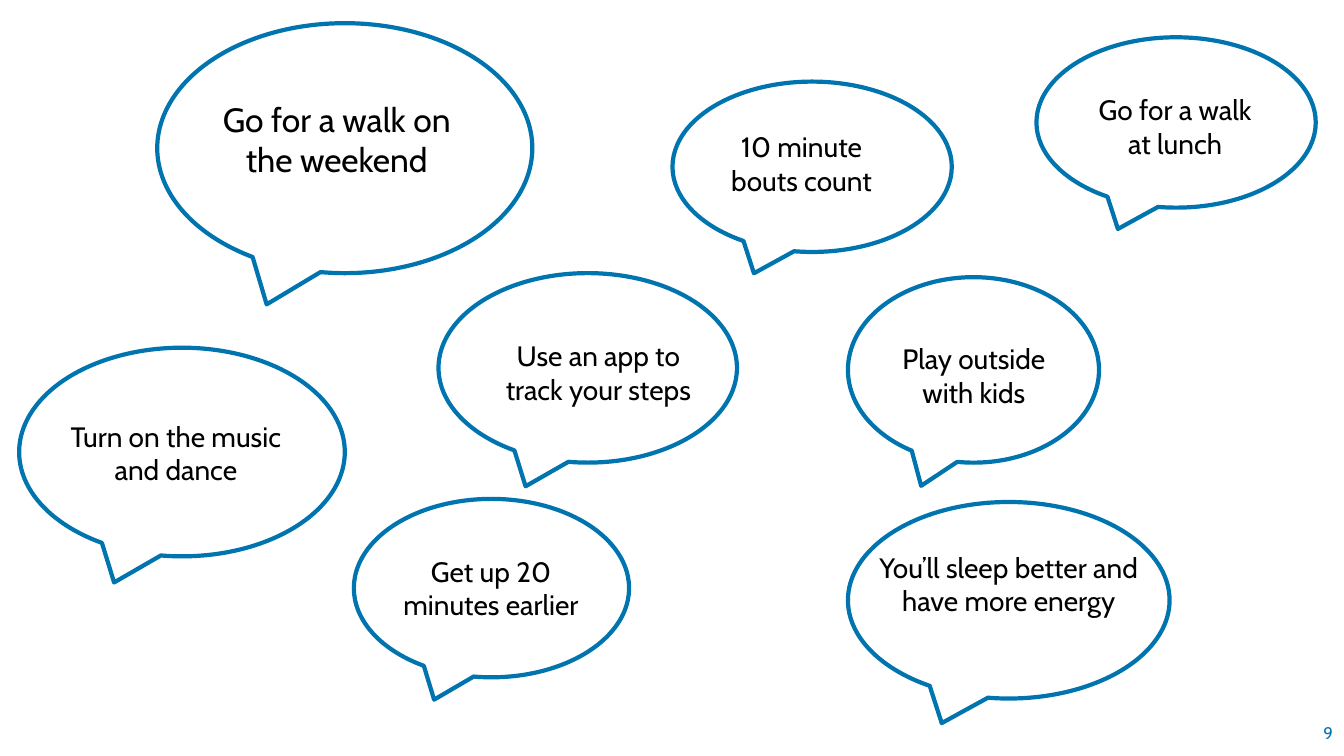
from dataclasses import dataclass

from pptx import Presentation
from pptx.dml.color import RGBColor
from pptx.enum.shapes import MSO_SHAPE
from pptx.enum.text import MSO_ANCHOR, MSO_AUTO_SIZE, PP_ALIGN
from pptx.util import Inches, Pt


@dataclass(frozen=True)
class Theme:
    font: str = "Cabin"
    blue: RGBColor = RGBColor(0x00, 0x74, 0xAF)
    black: RGBColor = RGBColor(0x00, 0x00, 0x00)
    large: int = 24
    body: int = 20
    small: int = 12
    line: int = 3


THEME = Theme()

TIPS = [
    ("Turn on the music and dance", (0.19, 3.45, 3.23, 2.07), (0.51, 4.11, 2.47, 0.77), THEME.body),
    ("Play outside with kids", (8.41, 2.75, 2.49, 1.84), (8.66, 3.34, 2, 0.77), THEME.body),
    ("Go for a walk on the weekend", (1.56, 0.23, 3.72, 2.48), (2.02, 0.93, 2.64, 0.91), THEME.large),
    ("Go for a walk at lunch", (10.28, 0.37, 2.77, 1.69), (10.68, 0.87, 1.95, 0.77), THEME.body),
    ("Use an app to track your steps", (4.35, 2.71, 2.96, 1.88), (4.78, 3.31, 2.31, 0.77), THEME.body),
    ("10 minute bouts count", (6.67, 0.81, 2.77, 1.69), (6.89, 1.24, 2.12, 0.77), THEME.body),
    ("You’ll sleep better and have more energy", (8.41, 4.98, 3.19, 1.95), (8.59, 5.41, 2.83, 1.11), THEME.body),
    ("Get up 20 minutes earlier", (3.51, 4.95, 2.73, 1.77), (3.81, 5.45, 2.12, 0.77), THEME.body),
]


def add_text(slide, text, place, size=THEME.body, color=THEME.black,
             align=PP_ALIGN.CENTER, anchor=MSO_ANCHOR.TOP, fit=MSO_AUTO_SIZE.NONE):
    box = slide.shapes.add_textbox(*map(Inches, place))
    frame = box.text_frame
    frame.word_wrap = True
    frame.auto_size = fit
    frame.vertical_anchor = anchor
    para = frame.paragraphs[0]
    para.alignment = align
    run = para.add_run()
    run.text = text
    run.font.name = THEME.font
    run.font.size = Pt(size)
    run.font.color.rgb = color


def add_bubble(slide, place):
    bubble = slide.shapes.add_shape(MSO_SHAPE.OVAL_CALLOUT, *map(Inches, place))
    bubble.shadow.inherit = False
    bubble.fill.background()
    bubble.line.color.rgb = THEME.blue
    bubble.line.width = Pt(THEME.line)


def main():
    deck = Presentation()
    deck.slide_width = Inches(13.33)
    deck.slide_height = Inches(7.5)
    slide = deck.slides.add_slide(deck.slide_layouts[6])
    add_text(slide, "9", (12.85, 7.07, 0.47, 0.4), size=THEME.small, color=THEME.blue,
             align=PP_ALIGN.RIGHT, anchor=MSO_ANCHOR.MIDDLE)
    for text, bubble, place, size in TIPS:
        add_bubble(slide, bubble)
        add_text(slide, text, place, size=size, fit=MSO_AUTO_SIZE.SHAPE_TO_FIT_TEXT)
    deck.save("out.pptx")


if __name__ == "__main__":
    main()
